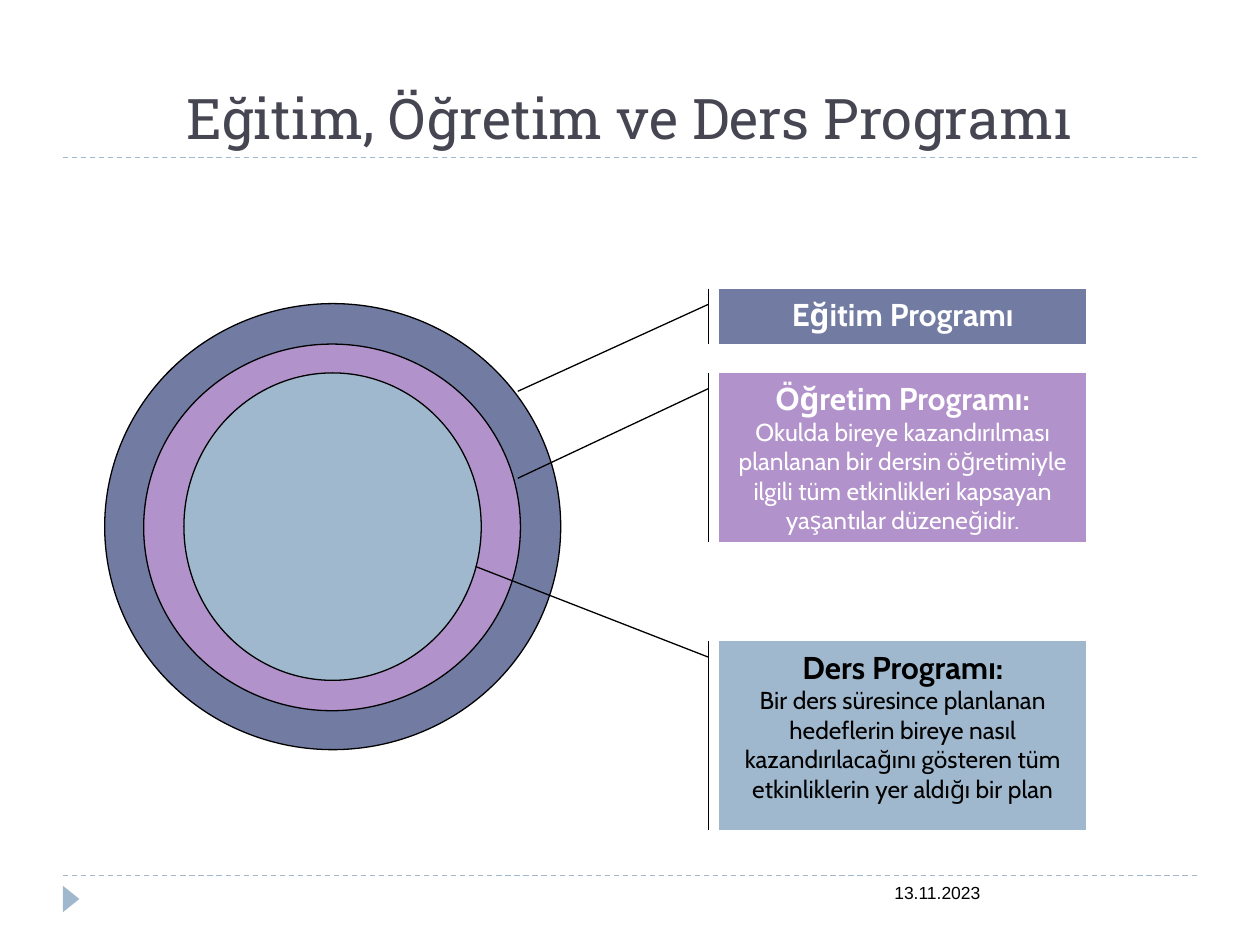
"""Build the slide on nested education, teaching and lesson programmes."""
from dataclasses import dataclass

import pptx
import pptx.dml.color
import pptx.enum.dml
import pptx.enum.shapes
import pptx.enum.text
import pptx.oxml
import pptx.oxml.ns
import pptx.util

Pt = pptx.util.Pt
SHAPE = pptx.enum.shapes.MSO_SHAPE
CENTER = pptx.enum.text.PP_ALIGN.CENTER
TOP = pptx.enum.text.MSO_ANCHOR.TOP
BOTTOM = pptx.enum.text.MSO_ANCHOR.BOTTOM
NAVY, LILAC, BLUE = "727CA3", "B292CA", "9FB8CD"
BLACK, WHITE, SLATE = "000000", "FFFFFF", "464653"
CALLOUT_LEFT, CALLOUT_WIDTH = 411.1, 209.5


@dataclass
class Ring:
    left: float
    top: float
    width: float
    height: float
    fill: str


@dataclass
class Callout:
    top: float
    height: float
    adjustments: tuple[float, ...]
    fill: str
    color: str
    heading: str
    body: str = ""


RINGS = [
    Ring(59.8, 173.5, 260.6, 254.9, NAVY),
    Ring(82.1, 196.6, 215.3, 209.5, LILAC),
    Ring(105.1, 213.1, 169.9, 175.7, BLUE),
]
CALLOUTS = [
    Callout(164.9, 31.7, (0.285, -0.03, 1.854, -0.55), NAVY, WHITE, "Eğitim Programı"),
    Callout(213.1, 96.5, (0.093, -0.03, 0.624, -0.55), LILAC, WHITE, "Öğretim Programı:",
            "Okulda bireye kazandırılması planlanan bir dersin öğretimiyle "
            "ilgili tüm etkinlikleri kapsayan yaşantılar düzeneğidir."),
    Callout(366.5, 108, (0.084, -0.03, -0.396, -0.665), BLUE, BLACK, "Ders Programı:",
            "Bir ders süresince planlanan hedeflerin bireye nasıl "
            "kazandırılacağını gösteren tüm etkinliklerin yer aldığı bir plan"),
]


def rgb(value: str) -> pptx.dml.color.RGBColor:
    """Turn a hex string into a colour."""
    return pptx.dml.color.RGBColor.from_string(value)


def set_all(target, formats: dict) -> None:
    """Set every attribute named in the dict."""
    for name, value in formats.items():
        setattr(target, name, value)


def write(p, text: str, font: str, size: float, color: str, bold: bool = False) -> None:
    """Add one formatted run to a paragraph."""
    r = p.add_run()
    r.text = text
    set_all(r.font, {"name": font, "size": Pt(size), "bold": bold})
    r.font.color.rgb = rgb(color)


def add_filled(s, kind, left: float, top: float, width: float, height: float,
               fill: str, outlined: bool = True):
    """Add a flat preset shape."""
    sp = s.shapes.add_shape(kind, Pt(left), Pt(top), Pt(width), Pt(height))
    sp.shadow.inherit = False
    sp.fill.solid()
    sp.fill.fore_color.rgb = rgb(fill)
    if outlined:
        sp.line.color.rgb = rgb(BLACK)
        sp.line.width = Pt(0.75)
    else:
        sp.line.fill.background()
    return sp


def add_rule(s, y: float) -> None:
    """Add a dashed rule across the slide."""
    sp = s.shapes.add_connector(pptx.enum.shapes.MSO_CONNECTOR.STRAIGHT,
                                Pt(36), Pt(y), Pt(684), Pt(y))
    sp.line.color.rgb = rgb(BLUE)
    set_all(sp.line, {"width": Pt(0.75),
                      "dash_style": pptx.enum.dml.MSO_LINE.DASH})
    effects = pptx.oxml.parse_xml(f"<a:effectLst {pptx.oxml.ns.nsdecls('a')}/>")
    sp._element.spPr.append(effects)


def add_callout(s, c: Callout) -> None:
    """Add a callout with a bold heading and an optional body."""
    sp = add_filled(s, SHAPE.LINE_CALLOUT_1_ACCENT_BAR, CALLOUT_LEFT, c.top,
                    CALLOUT_WIDTH, c.height, c.fill)
    for i, value in enumerate(c.adjustments):
        sp.adjustments[i] = value
    tf = sp.text_frame
    set_all(tf, {"word_wrap": True, "vertical_anchor": TOP})
    p = tf.paragraphs[0]
    p.alignment = CENTER
    write(p, c.heading, "Cabin", 18, c.color, True)
    if c.body:
        p = tf.add_paragraph()
        p.alignment = CENTER
        write(p, c.body, "Cabin", 14, c.color)


def add_title(s, text: str) -> None:
    """Place and format the title placeholder."""
    sp = s.shapes.title
    set_all(sp, {"left": Pt(36), "top": Pt(18), "width": Pt(648), "height": Pt(72)})
    tf = sp.text_frame
    set_all(tf, {"word_wrap": True, "vertical_anchor": BOTTOM})
    tf.paragraphs[0].alignment = CENTER
    write(tf.paragraphs[0], text, "Roboto Slab", 32, SLATE)


def add_date(s, text: str) -> None:
    """Add the date in the footer."""
    tf = s.shapes.add_textbox(Pt(504), Pt(500.4), Pt(180), Pt(28.8)).text_frame
    tf.word_wrap = True
    write(tf.paragraphs[0], text, "Arial", 10, BLACK)


def main() -> None:
    """Build and save the slide."""
    prs = pptx.Presentation()
    set_all(prs, {"slide_width": Pt(720), "slide_height": Pt(540)})
    s = prs.slides.add_slide(prs.slide_layouts[5])
    for y in (500.4, 90):
        add_rule(s, y)
    marker = add_filled(s, SHAPE.ISOSCELES_TRIANGLE, 33.1, 509, 15.1, 9.4, BLUE, False)
    marker.rotation = 90
    add_date(s, "13.11.2023")
    add_title(s, "Eğitim, Öğretim ve Ders Programı")
    for ring in RINGS:
        add_filled(s, SHAPE.FLOWCHART_CONNECTOR, ring.left, ring.top,
                   ring.width, ring.height, ring.fill)
    for callout in CALLOUTS:
        add_callout(s, callout)
    prs.save("out.pptx")


if __name__ == "__main__":
    main()
